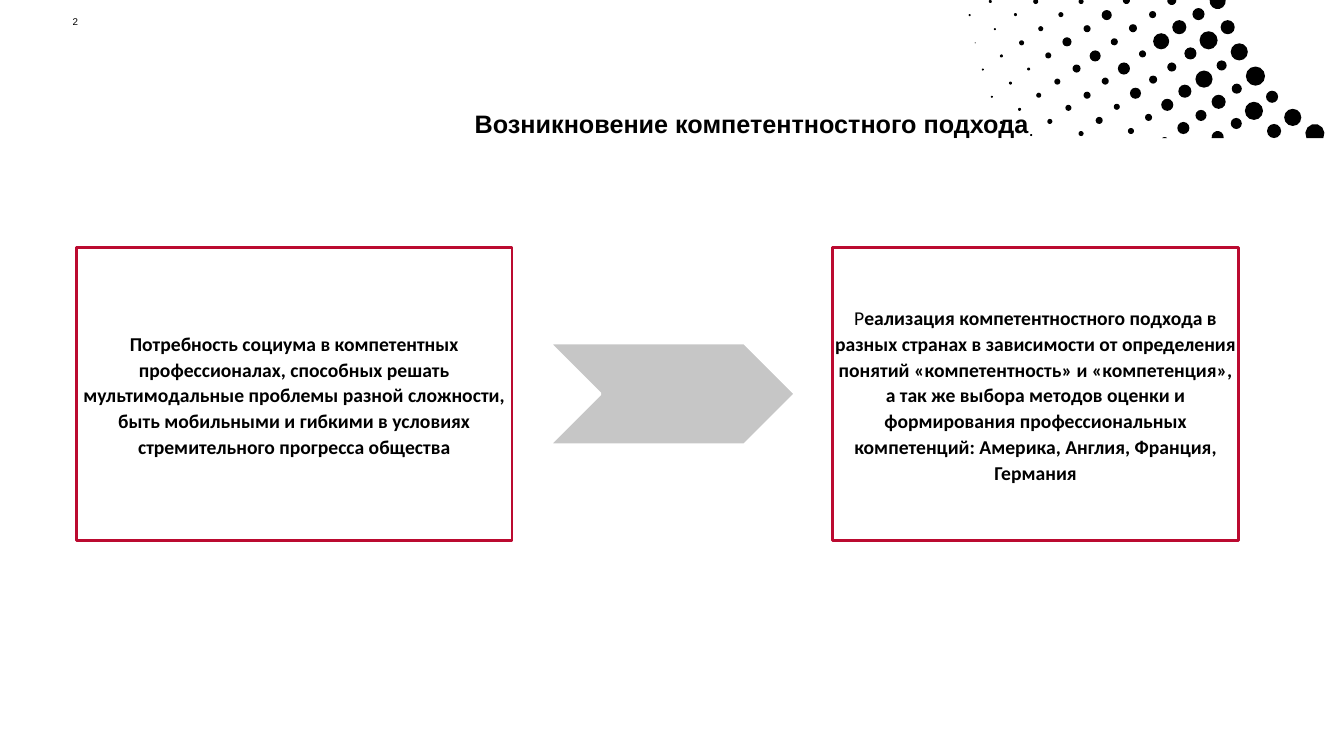
from math import asin, cos, pi, sin

from pptx import Presentation
from pptx import util as u
from pptx.dml.color import RGBColor
from pptx.enum import shapes, text

# Grid of hundredths of an inch on a 16:9 slide
ROWS = 750
COLS = ROWS * 16 / 9
CELL = u.Inches(0.01)
HUES = {"ink": "000000", "paper": "FFFFFF", "edge": "BB0A30", "arrow": "C6C6C6"}
KIND = shapes.MSO_SHAPE
MID = text.MSO_ANCHOR.MIDDLE

# Halftone strands, right to left: column, row and diameter of each dot
FIELD = (0, 137)
STRANDS = [
    [(1295, 123, 19), (1274, 108, 17), (1256, 90, 12), (1236, 66, 19),
     (1221, 43, 17), (1211, 20, 14), (1200, -7, 16)],
    [(1257, 123, 14), (1235, 101, 18), (1222, 83, 10), (1207, 60, 10),
     (1190, 31, 18), (1183, 8, 12)],
    [(1221, 117, 11), (1202, 94, 14), (1186, 70, 17), (1175, 47, 12),
     (1163, 20, 14), (1158, -4, 9)],
    [(1202, 130, 12), (1186, 109, 11), (1169, 84, 13), (1158, 62, 9),
     (1144, 33, 16), (1140, 11, 7)],
    [(1168, 121, 12), (1152, 98, 12), (1140, 75, 8), (1130, 50, 7),
     (1120, 24, 8), (1114, -3, 7)],
    [(1152, 136, 7), (1136, 113, 7), (1121, 87, 11), (1109, 62, 12),
     (1102, 38, 7), (1093, 10, 10)],
    [(1119, 127, 6), (1105, 103, 6), (1093, 77, 7), (1081, 50, 11),
     (1075, 25, 7), (1070, -1, 5)],
    [(1087, 116, 7), (1075, 91, 7), (1064, 64, 8), (1054, 37, 9), (1050, 12, 5)],
    [(1070, 130, 5), (1057, 104, 6), (1046, 78, 6), (1037, 52, 6),
     (1030, 26, 5), (1025, -1, 5)],
    [(1039, 118, 5), (1028, 92, 5), (1019, 67, 3), (1011, 40, 5), (1006, 13, 3)],
    [(1022, 133, 2), (1010, 107, 3), (1001, 81, 3), (992, 54, 3),
     (986, 28, 2), (981, 0, 3)],
    [(992, 120, 3), (983, 95, 2), (974, 68, 2), (967, 42, 1), (961, 14, 2)],
]


def span(box):
    return [round(n * CELL) for n in box]


def hue(name):
    return RGBColor.from_string(HUES[name])


def paint(shape, fill, edge=None):
    shape.shadow.inherit = False
    shape.fill.solid()
    shape.fill.fore_color.rgb = hue(fill)
    if edge:
        shape.line.color.rgb = hue(edge)
        shape.line.width = u.Pt(2)
    else:
        shape.line.fill.background()


def write(shape, *runs, font="Arial", size=14, align=text.PP_ALIGN.LEFT,
          anchor=text.MSO_ANCHOR.TOP, space=1.0, wrap=True, left=0):
    """Fill a shape with one paragraph of (words, bold) runs."""
    frame = shape.text_frame
    frame.word_wrap = wrap
    frame.vertical_anchor = anchor
    frame.margin_left = round(left * CELL)
    frame.margin_top = frame.margin_right = frame.margin_bottom = 0
    para = frame.paragraphs[0]
    para.alignment = align
    para.line_spacing = space
    for words, bold in runs:
        run = para.add_run()
        run.text = words
        run.font.name = font
        run.font.size = u.Pt(size)
        run.font.bold = bold
        run.font.color.rgb = hue("ink")


def clip(group, x, y, d, steps=7):
    """Draw the arc of a dot that lies inside the field, closed by a chord."""
    top, low = FIELD
    r = d / 2
    if y < top:
        start = asin((top - y - r) / r)
        sweep = pi - 2 * start
    else:
        tilt = asin((low - y - r) / r)
        start, sweep = pi - tilt, pi + 2 * tilt
    turns = [start + sweep * n / steps for n in range(steps + 1)]
    points = [span((x + r + r * cos(t), y + r + r * sin(t))) for t in turns]
    pen = group.shapes.build_freeform(*points[0])
    pen.add_line_segments(points[1:], close=True)
    return pen.convert_to_shape()


def halftone(slide):
    group = slide.shapes.add_group_shape()
    for x, y, d in (dot for strand in STRANDS for dot in strand):
        if y < FIELD[0] - 1 or y + d > FIELD[1] + 1:
            dot = clip(group, x, y, d)
        else:
            dot = group.shapes.add_shape(KIND.OVAL, *span((x, y, d, d)))
        paint(dot, "ink")


def heading(slide, box, words):
    write(slide.shapes.add_textbox(*span(box)), (words, True),
          size=18, space=1.1, left=347)


def number(slide, box, words):
    write(slide.shapes.add_textbox(*span(box)), (words, False),
          size=7, anchor=MID, wrap=False)


def card(slide, box, *runs):
    shape = slide.shapes.add_shape(KIND.RECTANGLE, *span(box))
    paint(shape, "paper", "edge")
    write(shape, *runs, font="Calibri", align=text.PP_ALIGN.CENTER,
          anchor=MID, space=1.1)


def flow(slide, box):
    """Cause on the left, outcome on the right, chevron between them."""
    x, y, w, h = box
    card(slide, (x, y, 432, h),
         ("Потребность социума в компетентных профессионалах, способных решать "
          "мультимодальные проблемы разной сложности, быть мобильными и гибкими "
          "в условиях стремительного прогресса общества", True))
    card(slide, (x + w - 403, y, 403, h),
         ("Р", False),
         ("еализация компетентностного подхода в разных странах в зависимости "
          "от определения понятий «компетентность» и «компетенция», а так же "
          "выбора методов оценки и формирования профессиональных компетенций: "
          "Америка, Англия, Франция, Германия", True))
    tall = 101
    arrow = slide.shapes.add_shape(
        KIND.CHEVRON, *span((x + 469, y + (h - tall) / 2, 244, tall)))
    paint(arrow, "arrow", "paper")


def main():
    deck = Presentation()
    deck.slide_width, deck.slide_height = span((COLS, ROWS))
    slide = deck.slides.add_slide(deck.slide_layouts[6])
    halftone(slide)
    heading(slide, (124, 104, 1240, 67), "Возникновение компетентностного подхода")
    number(slide, (72, 13, 52, 17), "2")
    flow(slide, (76, 245.3, 1153, 291))
    deck.save("out.pptx")


if __name__ == "__main__":
    main()
